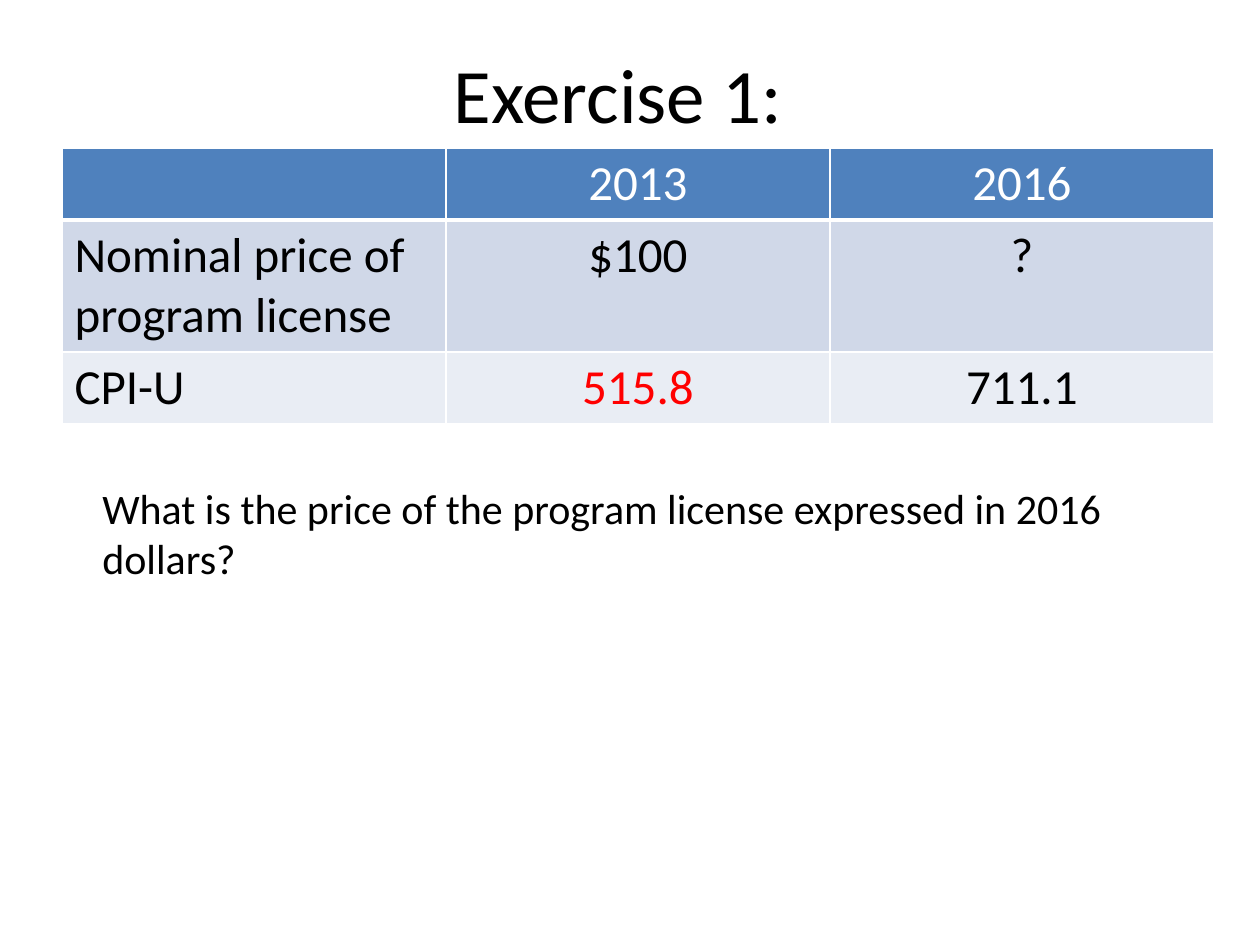
from dataclasses import dataclass

from lxml.etree import SubElement
from pptx import Presentation
from pptx.dml.color import RGBColor
from pptx.enum.text import MSO_ANCHOR, PP_ALIGN
from pptx.oxml.ns import qn
from pptx.util import Inches, Pt

PX = Inches(1) / 126


@dataclass(frozen=True)
class Theme:
    font: str = "Calibri"
    title: int = 44
    cell: int = 28
    body: int = 24
    ink: str = "000000"
    paper: str = "FFFFFF"
    alert: str = "FF0000"
    head: str = "4F81BD"
    bands: tuple = ("D0D8E8", "E9EDF4")
    rule: int = 1
    heavy: int = 3


THEME = Theme()


def emu(*sizes):
    return [round(size * PX) for size in sizes]


def write(frame, text, size, color=THEME.ink, align=PP_ALIGN.LEFT,
          anchor=MSO_ANCHOR.TOP):
    frame.word_wrap = True
    frame.vertical_anchor = anchor
    line = frame.paragraphs[0]
    line.alignment = align
    run = line.add_run()
    run.text = text
    run.font.name = THEME.font
    run.font.size = Pt(size)
    run.font.color.rgb = RGBColor.from_string(color)


def label(slide, box, text, size, **style):
    frame = slide.shapes.add_textbox(*emu(*box)).text_frame
    write(frame, text, size, **style)


def edge(cell, widths):
    props = cell._tc.get_or_add_tcPr()
    for spot, (side, width) in enumerate(widths.items()):
        line = SubElement(props, qn(f"a:ln{side}"), w=str(Pt(width)))
        fill = SubElement(line, qn("a:solidFill"))
        SubElement(fill, qn("a:srgbClr"), val=THEME.paper)
        props.insert(spot, line)


def prices(slide, box, rows, heights, alerts):
    shape = slide.shapes.add_table(len(rows), len(rows[0]), *emu(*box))
    table = shape.table
    for row, height in zip(table.rows, heights):
        row.height = emu(height)[0]
    for r, row in enumerate(rows):
        fill = THEME.bands[(r - 1) % 2] if r else THEME.head
        for c, text in enumerate(row):
            cell = table.cell(r, c)
            cell.fill.solid()
            cell.fill.fore_color.rgb = RGBColor.from_string(fill)
            edge(cell, {
                "L": THEME.rule,
                "R": THEME.rule,
                "T": THEME.heavy if r == 1 else THEME.rule,
                "B": THEME.rule if r else THEME.heavy,
            })
            if text:
                color = THEME.ink if r else THEME.paper
                write(cell.text_frame, text, THEME.cell,
                      color=THEME.alert if text in alerts else color,
                      align=PP_ALIGN.CENTER if c else PP_ALIGN.LEFT)


def main():
    deck = Presentation()
    deck.slide_width, deck.slide_height = emu(1260, 945)
    slide = deck.slides.add_slide(deck.slide_layouts[6])
    label(slide, (60, 38, 1134, 110), "Exercise 1: ", THEME.title,
          align=PP_ALIGN.CENTER, anchor=MSO_ANCHOR.MIDDLE)
    prices(slide, (62, 148, 1152, 276), [
        ("", "2013", "2016"),
        ("Nominal price of program license", "$100", "?"),
        ("CPI-U", "515.8", "711.1"),
    ], heights=(72, 132, 72), alerts={"515.8"})
    label(slide, (90, 476, 1124, 115),
          "What is the price of the program license expressed in 2016 dollars?",
          THEME.body)
    deck.save("out.pptx")


if __name__ == "__main__":
    main()
